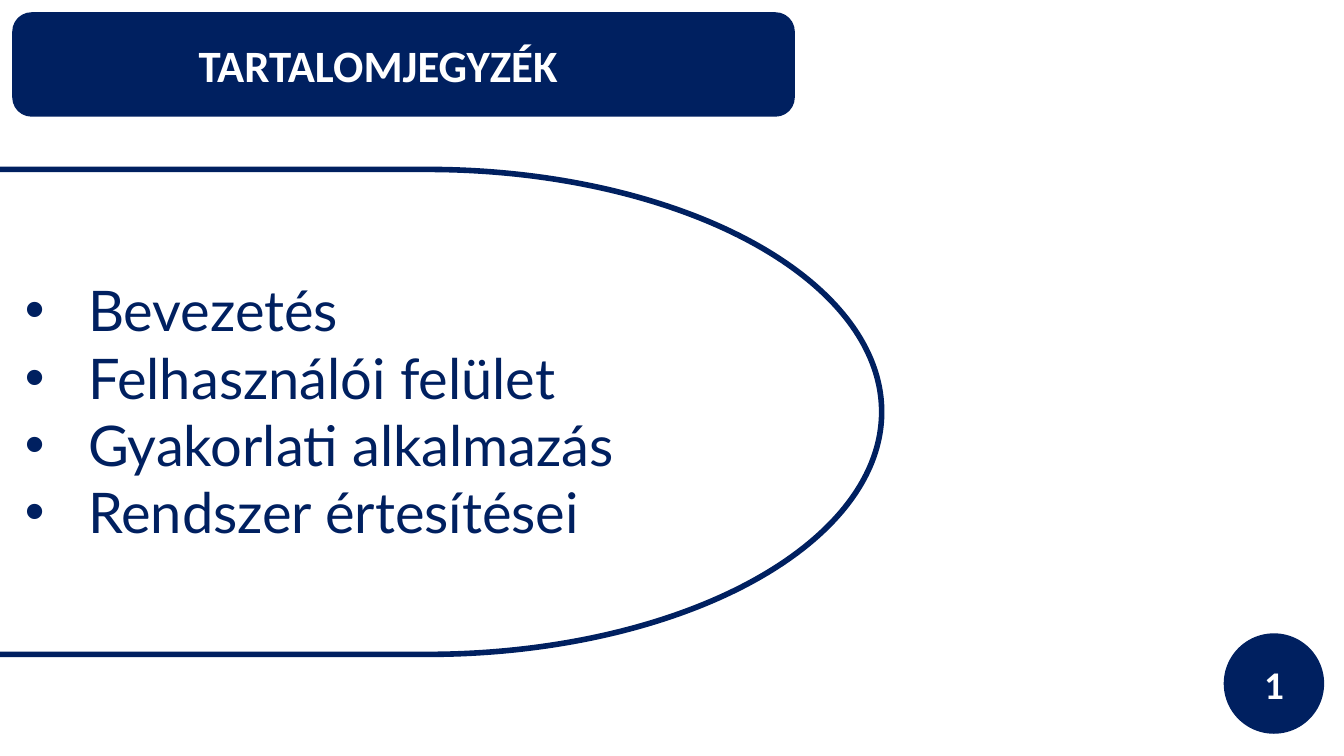
from pptx import Presentation
from pptx.dml.color import RGBColor
from pptx.enum.shapes import MSO_SHAPE as Kind
from pptx.enum.text import MSO_ANCHOR as Anchor, PP_ALIGN as Align, MSO_AUTO_SIZE as Auto
from pptx.oxml.ns import qn
from pptx.util import Cm, Pt
from lxml.etree import SubElement

NAVY = "002060"
WHITE = "FFFFFF"


def tint(code):
    return RGBColor.from_string(code)


class Page:
    def __init__(self, deck):
        self.slide = deck.slides.add_slide(deck.slide_layouts[5])
        self.head = "Calibri"
        self.body = "Lato"

    def style(self, para, face, size, color, bold=False):
        for run in para.runs:
            font = run.font
            font.name, font.size, font.bold = face, Pt(size), bold
            font.color.rgb = tint(color)

    def shape(self, kind, box, fill=None):
        item = self.slide.shapes.add_shape(kind, *map(Cm, box))
        item.shadow.inherit = False
        if fill:
            item.fill.solid()
            item.fill.fore_color.rgb = tint(fill)
        else:
            item.fill.background()
        item.line.color.rgb = tint(NAVY)
        item.line.width = Pt(4)
        return item

    def title(self, text, box):
        item = self.slide.shapes.title
        item.left, item.top, item.width, item.height = map(Cm, box)
        frame = item.text_frame
        frame.text = text
        frame.auto_size = Auto.NONE
        frame.vertical_anchor = Anchor.MIDDLE
        para = frame.paragraphs[0]
        para.alignment = Align.LEFT
        self.style(para, self.head, 32, WHITE, True)
        self.slide.shapes._spTree.append(item._element)

    def badge(self, text, box):
        frame = self.shape(Kind.OVAL, box, NAVY).text_frame
        frame.margin_left = frame.margin_right = 0
        frame.margin_top = frame.margin_bottom = 0
        frame.vertical_anchor = Anchor.MIDDLE
        frame.text = text
        para = frame.paragraphs[0]
        para.alignment = Align.CENTER
        self.style(para, self.head, 28, WHITE, True)

    def bullets(self, lines, box):
        frame = self.slide.shapes.add_textbox(*map(Cm, box)).text_frame
        frame.word_wrap = True
        frame.text = "\n".join(lines)
        for para in frame.paragraphs:
            props = para._p.get_or_add_pPr()
            props.set("marL", str(Cm(1.59)))
            props.set("indent", str(-Cm(1.59)))
            SubElement(props, qn("a:buFont")).set("typeface", "Arial")
            SubElement(props, qn("a:buChar")).set("char", "•")
            self.style(para, self.body, 40, NAVY)


def main():
    deck = Presentation()
    deck.slide_width, deck.slide_height = Cm(33.87), Cm(19.05)
    page = Page(deck)
    page.badge("1", (30.91, 16.03, 2.39, 2.39))
    page.shape(Kind.FLOWCHART_ALTERNATE_PROCESS, (0.38, 0.38, 19.58, 2.49), NAVY)
    page.title("TARTALOMJEGYZÉK", (4.75, 0.81, 10.85, 1.63))
    page.shape(Kind.FLOWCHART_DELAY, (-0.69, 4.27, 22.91, 12.22))
    page.bullets(
        ["Bevezetés", "Felhasználói felület", "Gyakorlati alkalmazás", "Rendszer értesítései"],
        (0.38, 6.83, 20.75, 7.09),
    )
    deck.save("out.pptx")


if __name__ == "__main__":
    main()
